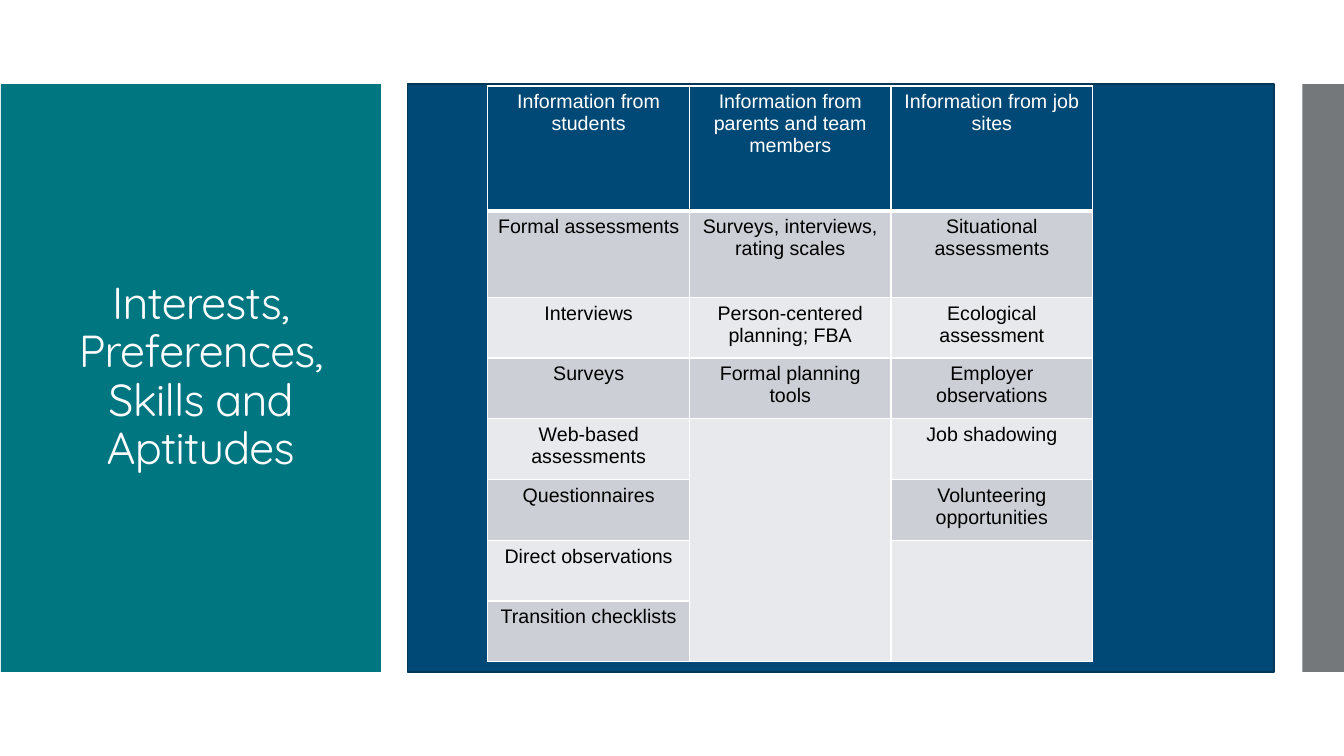
import pptx
import pptx.util
import pptx.dml.color
import pptx.enum.shapes
import pptx.enum.text
import pptx.oxml.ns
from lxml import etree
from pptx.util import Pt

TITLE = "Interests, Preferences, Skills and Aptitudes"
COLUMNS = {
    "Information from students": [
        "Formal assessments", "Interviews", "Surveys", "Web-based assessments",
        "Questionnaires", "Direct observations", "Transition checklists"],
    "Information from parents and team members": [
        "Surveys, interviews, rating scales", "Person-centered planning; FBA",
        "Formal planning tools"],
    "Information from job sites": [
        "Situational assessments", "Ecological assessment", "Employer observations",
        "Job shadowing", "Volunteering opportunities"],
}
THEME = {
    "blue": "004976", "blue_line": "003657", "teal": "007681", "gray": "75787B",
    "white": "FFFFFF", "black": "000000", "bands": ("CCD0D6", "E7E9EC"),
    "title_font": "Quicksand", "table_font": "Arial", "title_size": 32, "table_size": 14,
}
PANEL_TOP, PANEL_HEIGHT = 60, 420
PANELS = [  # left, width, fill, line
    (291, 619, "blue", "blue_line"),
    (0.7, 271.4, "teal", None),
    (930.2, 29.8, "gray", None),
]
TABLE_LEFT, TABLE_TOP, COLUMN_WIDTH = 348.5, 61.4, 144
ROW_HEIGHTS = [89.1, 61.8] + [43.4] * 6


def color(value):
    return pptx.dml.color.RGBColor.from_string(value)


def write_text(frame, text, font, size, ink, line_spacing=None, tracking=None):
    paragraph = frame.paragraphs[0]
    paragraph.alignment = pptx.enum.text.PP_ALIGN.CENTER
    if line_spacing:
        paragraph.line_spacing = line_spacing
    run = paragraph.add_run()
    run.text = text
    run.font.name = font
    run.font.size = Pt(size)
    run.font.bold = False
    run.font.color.rgb = color(ink)
    if tracking:
        run.font.element.set("spc", str(round(tracking * 100))) if hasattr(
            run.font, "element") else run._r.get_or_add_rPr().set(
            "spc", str(round(tracking * 100)))


def add_panel(slide, left, width, fill, line):
    panel = slide.shapes.add_shape(
        pptx.enum.shapes.MSO_SHAPE.RECTANGLE,
        Pt(left), Pt(PANEL_TOP), Pt(width), Pt(PANEL_HEIGHT))
    panel.shadow.inherit = False
    panel.fill.solid()
    panel.fill.fore_color.rgb = color(THEME[fill])
    if line:
        panel.line.color.rgb = color(THEME[line])
        panel.line.width = Pt(0.85)
    else:
        panel.line.fill.background()


def style_cell(cell, fill, bottom_width=1):
    """Give the cell white borders and a solid fill; borders must precede the fill."""
    properties = cell._tc.get_or_add_tcPr()
    for side in "LRTB":
        width = bottom_width if side == "B" else 1
        border = etree.SubElement(
            properties, pptx.oxml.ns.qn(f"a:ln{side}"), w=str(Pt(width)))
        solid = etree.SubElement(border, pptx.oxml.ns.qn("a:solidFill"))
        etree.SubElement(solid, pptx.oxml.ns.qn("a:srgbClr"), val=THEME["white"])
    cell.fill.solid()
    cell.fill.fore_color.rgb = color(fill)


def add_information_table(slide):
    row_count = len(ROW_HEIGHTS)
    table = slide.shapes.add_table(
        row_count, len(COLUMNS), Pt(TABLE_LEFT), Pt(TABLE_TOP),
        Pt(COLUMN_WIDTH * len(COLUMNS)), Pt(sum(ROW_HEIGHTS))).table
    for row, height in zip(table.rows, ROW_HEIGHTS):
        row.height = Pt(height)
    for column_index, (heading, entries) in enumerate(COLUMNS.items()):
        table.columns[column_index].width = Pt(COLUMN_WIDTH)
        texts = [heading] + entries
        for row_index in range(row_count):
            is_header = row_index == 0
            is_empty = row_index >= len(texts)
            cell = table.cell(row_index, column_index)
            band = THEME["bands"][1 if is_empty else (row_index - 1) % 2]
            style_cell(cell, THEME["blue"] if is_header else band, 3 if is_header else 1)
            if not is_empty:
                write_text(cell.text_frame, texts[row_index], THEME["table_font"],
                           THEME["table_size"], THEME["white" if is_header else "black"])
        if len(texts) < row_count:
            table.cell(len(texts), column_index).merge(
                table.cell(row_count - 1, column_index))


def add_title(slide):
    title = slide.shapes.title
    title.left, title.top, title.width, title.height = Pt(40.3), Pt(88.6), Pt(206), Pt(362)
    frame = title.text_frame
    frame.word_wrap = True
    frame.auto_size = pptx.enum.text.MSO_AUTO_SIZE.NONE
    frame.vertical_anchor = pptx.enum.text.MSO_ANCHOR.MIDDLE
    write_text(frame, TITLE, THEME["title_font"], THEME["title_size"], THEME["white"],
               line_spacing=0.9, tracking=-0.6)
    title.element.getparent().append(title.element)  # in front of the panels


def main():
    presentation = pptx.Presentation()
    presentation.slide_width, presentation.slide_height = Pt(960), Pt(540)
    slide = presentation.slides.add_slide(presentation.slide_layouts[5])
    for panel in PANELS:
        add_panel(slide, *panel)
    add_title(slide)
    add_information_table(slide)
    presentation.save("out.pptx")


if __name__ == "__main__":
    main()
